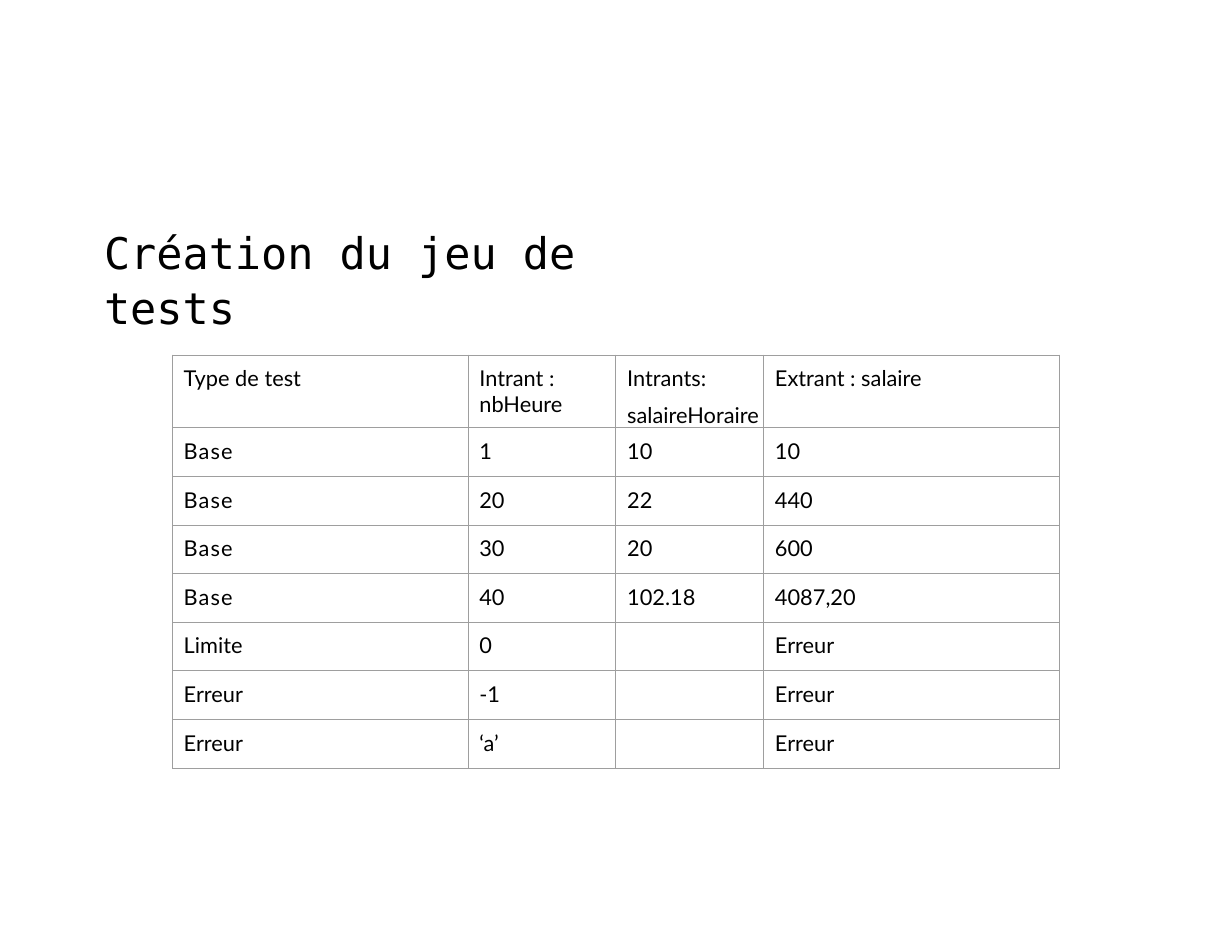
from lxml.etree import SubElement
from pptx import Presentation
from pptx.dml.color import RGBColor
from pptx.oxml.ns import qn
from pptx.util import Inches, Pt

WIDTH, HEIGHT = 11, 8.5
BLACK, GREY = "000000", "9E9E9E"
BASE_TRACKING = 70  # hundredths of a point

HEADERS = ["Type de test", "Intrant : nbHeure", "Intrants:\nsalaireHoraire",
           "Extrant : salaire"]
TESTS = [
    ["Base", "1", "10", "10"],
    ["Base", "20", "22", "440"],
    ["Base", "30", "20", "600"],
    ["Base", "40", "102.18", "4087,20"],
    ["Limite", "0", "", "Erreur"],
    ["Erreur", "-1", "", "Erreur"],
    ["Erreur", "‘a’", "", "Erreur"],
]
COLUMN_SHARES = [2, 1, 1, 2]


def color(value):
    return RGBColor.from_string(value)


def style_paragraph(paragraph, font_name, size, space_before):
    paragraph.space_before = Pt(space_before)
    paragraph.font.name = font_name
    paragraph.font.size = Pt(size)
    paragraph.font.color.rgb = color(BLACK)


def set_margins(holder, top):
    holder.margin_left = holder.margin_right = holder.margin_bottom = 0
    holder.margin_top = Inches(top)


def add_title(slide, box, text):
    shape = slide.shapes.add_textbox(*map(Inches, box))
    frame = shape.text_frame
    frame.word_wrap = True
    set_margins(frame, 0.01)
    frame.text = text
    style_paragraph(frame.paragraphs[0], "DejaVu Sans Mono", 28, 0.9)
    frame.paragraphs[0].line_spacing = 1.04


def add_borders(cell):
    properties = cell._tc.get_or_add_tcPr()
    for position, side in enumerate(("lnL", "lnR", "lnT", "lnB")):
        line = properties.makeelement(qn(f"a:{side}"), {"w": str(Pt(0.75))})
        fill = SubElement(line, qn("a:solidFill"))
        SubElement(fill, qn("a:srgbClr"), val=GREY)
        properties.insert(position, line)


def fill_cell(cell, text):
    set_margins(cell, 0.09)
    cell.fill.background()
    add_borders(cell)
    cell.text = text
    for paragraph in cell.text_frame.paragraphs:
        style_paragraph(paragraph, "Lato", 14, 6.7)
        paragraph._p.get_or_add_pPr().set("marL", str(Inches(0.1)))
        if text == "Base":
            for run in paragraph.runs:
                run.font._element.set("spc", str(BASE_TRACKING))


def add_test_table(slide, box, rows):
    left, top, width, height = map(Inches, box)
    table = slide.shapes.add_table(len(rows), len(COLUMN_SHARES),
                                   left, top, width, height).table
    table.first_row = table.horz_banding = False

    # The header is one and a half rows tall
    unit = height / (len(rows) + 0.5)
    for index, row in enumerate(table.rows):
        row.height = int(unit * (1 if index else 1.5))
    for column, share in zip(table.columns, COLUMN_SHARES):
        column.width = int(width * share / sum(COLUMN_SHARES))

    for row, texts in zip(table.rows, rows):
        for cell, text in zip(row.cells, texts):
            fill_cell(cell, text)


def main():
    presentation = Presentation()
    presentation.slide_width = Inches(WIDTH)
    presentation.slide_height = Inches(HEIGHT)
    slide = presentation.slides.add_slide(presentation.slide_layouts[6])

    add_title(slide, (0.93, 1.99, 4.33, 0.49), "Création du jeu de tests")
    # Table centred on the slide's width
    table_width = WIDTH * 0.72
    add_test_table(slide, ((WIDTH - table_width) / 2, 3.17, table_width, 3.69),
                   [HEADERS] + TESTS)

    presentation.save("out.pptx")


if __name__ == "__main__":
    main()
